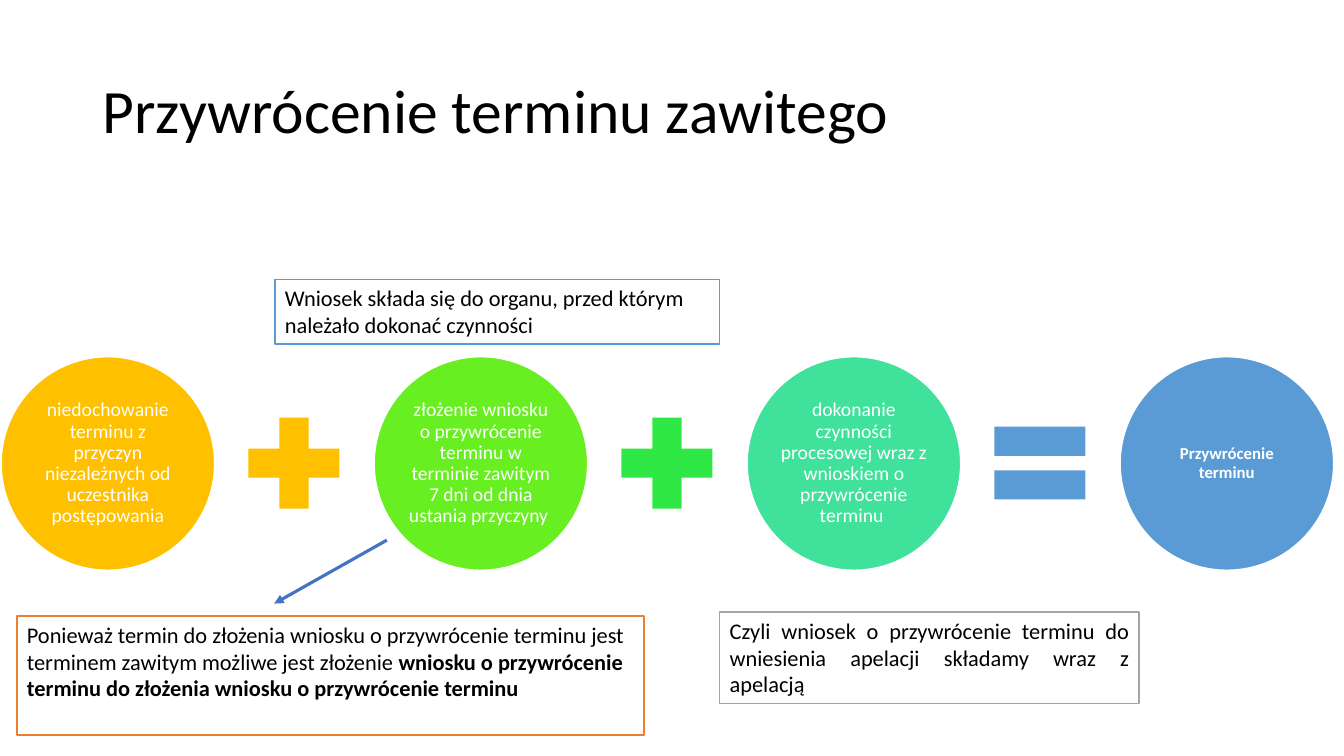
from lxml import etree
from pptx import Presentation, util as u
from pptx.dml.color import RGBColor
from pptx.enum import shapes, text
from pptx.oxml.ns import qn

WHITE = RGBColor(0xFF, 0xFF, 0xFF)
BLACK = RGBColor(0, 0, 0)
GOLD = RGBColor(0xFF, 0xC0, 0x00)
LIME = RGBColor(0x67, 0xEF, 0x21)
GREEN = RGBColor(0x30, 0xE8, 0x45)
MINT = RGBColor(0x3F, 0xE1, 0x9B)
SKY = RGBColor(0x5B, 0x9B, 0xD5)
BLUE = RGBColor(0x44, 0x72, 0xC4)
GRAY = RGBColor(0xA5, 0xA5, 0xA5)
RUST = RGBColor(0xED, 0x7D, 0x31)

FORM = shapes.MSO_SHAPE
LEFT, CENTER, JUST = (text.PP_ALIGN.LEFT, text.PP_ALIGN.CENTER,
                      text.PP_ALIGN.JUSTIFY)

# Row of circles and signs, in cm
START, PITCH = 0.03, 9.4
DISC, DISC_TOP = 5.38, 8.99
SIGN, SIGN_TOP, SIGN_GAP = 3.12, 10.11, 5.82


def add_form(slide, kind, box, fill, line=None):
    form = slide.shapes.add_shape(kind, *map(u.Cm, box))
    form.shadow.inherit = False
    form.fill.solid()
    form.fill.fore_color.rgb = fill
    if line is None:
        form.line.fill.background()
    else:
        form.line.color.rgb = line
        form.line.width = u.Pt(1)
    return form


def write(form, parts, size, color, align=LEFT, bold=False):
    """Fill the first paragraph with runs; the second run is bold."""
    form.text_frame.word_wrap = True
    para = form.text_frame.paragraphs[0]
    para.alignment = align
    for i, part in enumerate(parts):
        run = para.add_run()
        run.text = part
        font = run.font
        font.name, font.size = "Calibri", u.Pt(size)
        font.bold = bold or i > 0
        font.color.rgb = color
    return para


def add_title(slide, words):
    box = slide.shapes.add_textbox(*map(u.Cm, (2.33, 1.01, 29.21, 3.68)))
    box.text_frame.vertical_anchor = text.MSO_ANCHOR.MIDDLE
    write(box, [words], 44, BLACK).line_spacing = 0.9


def add_disc(slide, col, words, fill, size=14, bold=False):
    box = START + col * PITCH, DISC_TOP, DISC, DISC
    disc = add_form(slide, FORM.OVAL, box, fill, WHITE)
    frame = disc.text_frame
    frame.margin_left = frame.margin_right = u.Cm(0.05)
    frame.margin_top = frame.margin_bottom = u.Cm(0.05)
    frame.vertical_anchor = text.MSO_ANCHOR.MIDDLE
    write(disc, [words], size, WHITE, CENTER, bold).line_spacing = 0.9


def add_sign(slide, col, kind, fill):
    left = START + col * PITCH + SIGN_GAP
    add_form(slide, kind, (left, SIGN_TOP, SIGN, SIGN), fill)


def add_note(slide, box, parts, line, align=LEFT):
    note = add_form(slide, FORM.RECTANGLE, box, WHITE, line)
    note.text_frame.vertical_anchor = text.MSO_ANCHOR.TOP
    write(note, parts, 16, BLACK, align)


def add_arrow(slide, ends):
    arrow = slide.shapes.add_connector(shapes.MSO_CONNECTOR.STRAIGHT,
                                       *map(u.Cm, ends))
    arrow.line.color.rgb = BLUE
    arrow.line.width = u.Pt(2.25)
    tip = etree.SubElement(arrow.line._get_or_add_ln(), qn("a:tailEnd"))
    tip.set("type", "triangle")
    etree.SubElement(arrow._element.spPr, qn("a:effectLst"))


def main():
    deck = Presentation()
    deck.slide_width, deck.slide_height = u.Cm(33.87), u.Cm(19.05)
    slide = deck.slides.add_slide(deck.slide_layouts[6])

    add_title(slide, "Przywrócenie terminu zawitego")

    # Conditions that add up to the result
    discs = [
        ("niedochowanie terminu z przyczyn niezależnych od uczestnika "
         "postępowania", GOLD),
        ("złożenie wniosku o przywrócenie terminu w terminie zawitym "
         "7 dni od dnia ustania przyczyny ", LIME),
        ("dokonanie czynności procesowej wraz z wnioskiem o przywrócenie "
         "terminu ", MINT),
        ("Przywrócenie terminu", SKY, 12, True),
    ]
    for col, disc in enumerate(discs):
        add_disc(slide, col, *disc)
    signs = [(FORM.MATH_PLUS, GOLD), (FORM.MATH_PLUS, GREEN),
             (FORM.MATH_EQUAL, SKY)]
    for col, sign in enumerate(signs):
        add_sign(slide, col, *sign)

    # Notes around the row
    add_note(slide, (6.93, 7.04, 11.2, 1.63),
             ["Wniosek składa się do organu, przed którym należało "
              "dokonać czynności"], SKY)
    add_note(slide, (18.14, 15.42, 10.57, 2.31),
             ["Czyli wniosek o przywrócenie terminu do wniesienia apelacji "
              "składamy wraz z apelacją"], GRAY, JUST)
    add_arrow(slide, (9.75, 13.61, 6.91, 15.21))
    add_note(slide, (0.43, 15.52, 15.8, 3.0),
             ["Ponieważ termin do złożenia wniosku o przywrócenie terminu "
              "jest terminem zawitym możliwe jest złożenie ",
              "wniosku o przywrócenie terminu do złożenia wniosku "
              "o przywrócenie terminu"], RUST)

    deck.save("out.pptx")


if __name__ == "__main__":
    main()
